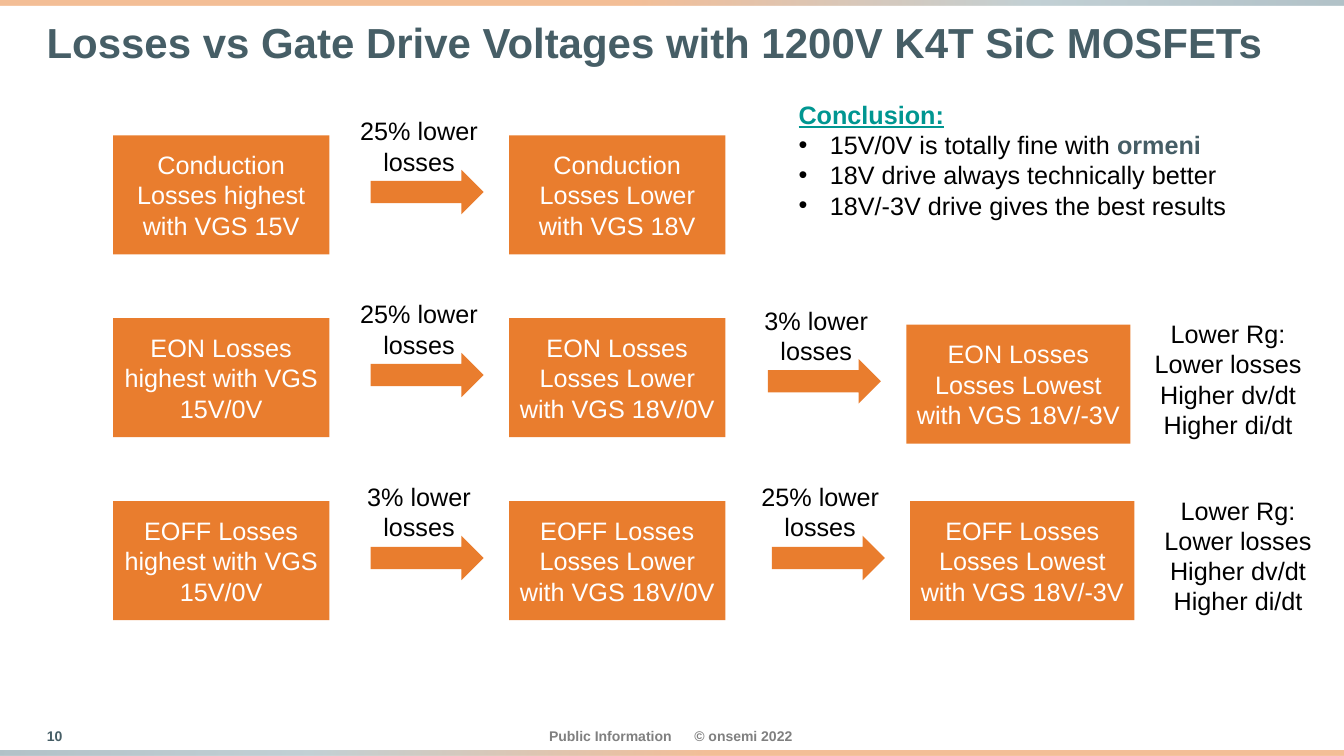
from dataclasses import dataclass

import pptx
import pptx.dml.color
import pptx.enum.shapes
import pptx.enum.text
import pptx.oxml.ns
import pptx.util
from lxml import etree
from pptx.util import Cm

SHAPE = pptx.enum.shapes.MSO_SHAPE
ALIGN = pptx.enum.text.PP_ALIGN
ANCHOR = pptx.enum.text.MSO_ANCHOR
qn = pptx.oxml.ns.qn

ORANGE, SLATE, TEAL = "E97D2E", "465E66", "009691"
WHITE, BLACK, GREY = "FFFFFF", "000000", "808080"
BOX_H = 3.0
ROW_TOP, ROW_STEP = 3.41, 4.61
COL_1, COL_2 = 2.85, 12.83


@dataclass
class Step:
    text: str
    x: float
    y: float
    w: float = 5.45
    gain: str = ""  # label of the arrow leading to this box


@dataclass
class Note:
    center: float
    y: float


def rgb(value: str) -> pptx.dml.color.RGBColor:
    return pptx.dml.color.RGBColor.from_string(value)


def add_run(p, text: str, *, size: float = 18, color: str = BLACK,
            bold: bool = False, underline: bool = False) -> None:
    r = p.add_run()
    r.text = text
    r.font.name = "Arial"
    r.font.size = pptx.util.Pt(size)
    r.font.bold = bold
    r.font.underline = underline
    r.font.color.rgb = rgb(color)


def write(tf, lines: list[str], *, align=ALIGN.CENTER, anchor=ANCHOR.TOP,
          wrap: bool = True, inset: float | None = None,
          tab: float | None = None, **font) -> None:
    tf.word_wrap = wrap
    tf.vertical_anchor = anchor
    if inset is not None:
        tf.margin_left = tf.margin_right = tf.margin_top = tf.margin_bottom = Cm(inset)
    for i, line in enumerate(lines):
        p = tf.add_paragraph() if i else tf.paragraphs[0]
        p.alignment = align
        if tab is not None:
            tabs = etree.SubElement(p._p.get_or_add_pPr(), qn("a:tabLst"))
            etree.SubElement(tabs, qn("a:tab"), pos=str(Cm(tab)), algn="l")
        add_run(p, line, **font)


def place(sp, x: float, y: float, w: float, h: float) -> None:
    sp.left, sp.top, sp.width, sp.height = Cm(x), Cm(y), Cm(w), Cm(h)


def add_text(s, x: float, y: float, w: float, h: float, lines: list[str], **style) -> None:
    write(s.shapes.add_textbox(Cm(x), Cm(y), Cm(w), Cm(h)).text_frame, lines, **style)


def add_shape(s, kind, x: float, y: float, w: float, h: float):
    sp = s.shapes.add_shape(kind, Cm(x), Cm(y), Cm(w), Cm(h))
    sp.shadow.inherit = False
    sp.fill.solid()
    sp.fill.fore_color.rgb = rgb(ORANGE)
    sp.line.fill.background()
    return sp


def add_bar(s, y: float, angle: int) -> None:
    sp = add_shape(s, SHAPE.RECTANGLE, 0, y, 33.87, 0.14)
    sp.fill.gradient()
    sp.fill.gradient_angle = angle
    stops = sp.element.spPr.find(qn("a:gradFill")).find(qn("a:gsLst"))
    for stop in list(stops):
        stops.remove(stop)
    for pos, color in ((47, ORANGE), (77, "87A3AC"), (100, "648692")):
        stop = etree.SubElement(stops, qn("a:gs"), pos=str(pos * 1000))
        clr = etree.SubElement(stop, qn("a:srgbClr"), val=color)
        etree.SubElement(clr, qn("a:alpha"), val="50000")


def add_step(s, step: Step) -> None:
    sp = add_shape(s, SHAPE.RECTANGLE, step.x, step.y, step.w, BOX_H)
    write(sp.text_frame, [step.text], anchor=ANCHOR.MIDDLE, color=WHITE)
    if step.gain:
        add_shape(s, SHAPE.RIGHT_ARROW, step.x - 3.49, step.y + 0.87, 2.85, 1.12)
        add_text(s, step.x - 4.02, step.y - 0.62, 3.5, 1.8,
                 [step.gain, "losses"], wrap=False)


def add_conclusion(sp) -> None:
    place(sp, 19.87, 2.37, 11.4, 4.11)
    tf = sp.text_frame
    tf.auto_size = pptx.enum.text.MSO_AUTO_SIZE.NONE
    tf.word_wrap = False
    items = [
        [("Conclusion:", dict(color=TEAL, bold=True, underline=True))],
        [("15V/0V is totally fine with ", {}), ("ormeni", dict(color=SLATE, bold=True))],
        [("18V drive always technically better", {})],
        [("18V/-3V drive gives the best results", {})],
    ]
    for i, runs in enumerate(items):
        p = tf.add_paragraph() if i else tf.paragraphs[0]
        pPr = p._p.get_or_add_pPr()
        indent = Cm(0.79) if i else 0
        pPr.set("marL", str(indent))
        pPr.set("indent", str(-indent))
        if i:
            etree.SubElement(pPr, qn("a:buFont"), typeface="Arial")
            etree.SubElement(pPr, qn("a:buChar"), char="•")
        else:
            etree.SubElement(pPr, qn("a:buNone"))
        p.space_before = pptx.util.Pt(0)
        for text, font in runs:
            add_run(p, text, **font)


def main() -> None:
    prs = pptx.Presentation()
    prs.slide_width, prs.slide_height = Cm(33.87), Cm(19.05)
    s = prs.slides.add_slide(prs.slide_layouts[1])

    # Frame bars and footer
    add_bar(s, 0, 0)
    add_bar(s, 18.91, 180)
    footer = dict(anchor=ANCHOR.MIDDLE, inset=0, size=10, bold=True)
    add_text(s, 13.84, 18.34, 6.3, 0.43, ["Public Information\t© onsemi 2022"],
             align=ALIGN.LEFT, tab=3.66, color=GREY, **footer)
    add_text(s, 0.38, 18.34, 1.19, 0.43, ["10"], align=ALIGN.RIGHT, color=SLATE, **footer)

    # Title and conclusion
    title = s.shapes.title
    place(title, 0.92, 0.41, 32.03, 1.42)
    write(title.text_frame, ["Losses vs Gate Drive Voltages with 1200V K4T SiC MOSFETs"],
          align=ALIGN.LEFT, anchor=ANCHOR.MIDDLE, size=30, color=SLATE, bold=True)
    title.text_frame.paragraphs[0].line_spacing = 0.92
    add_conclusion(s.placeholders[1])

    # Loss chains, one row per loss type
    row_1, row_2, row_3 = (ROW_TOP + i * ROW_STEP for i in range(3))
    steps = [
        Step("Conduction Losses highest with VGS 15V", COL_1, row_1),
        Step("Conduction Losses Lower with VGS 18V", COL_2, row_1, gain="25% lower"),
        Step("EON Losses highest with VGS 15V/0V", COL_1, row_2),
        Step("EON Losses Losses Lower with VGS 18V/0V", COL_2, row_2, gain="25% lower"),
        Step("EON Losses Losses Lowest with VGS 18V/-3V", 22.84, row_2 + 0.16, 5.65, "3% lower"),
        Step("EOFF Losses highest with VGS 15V/0V", COL_1, row_3),
        Step("EOFF Losses Losses Lower with VGS 18V/0V", COL_2, row_3, gain="3% lower"),
        Step("EOFF Losses Losses Lowest with VGS 18V/-3V", 22.94, row_3, 5.65, "25% lower"),
    ]
    for step in steps:
        add_step(s, step)

    # Gate resistor notes
    for note in (Note(30.95, 7.9), Note(31.2, 12.35)):
        add_text(s, note.center - 2.12, note.y, 4.24, 3.33,
                 ["Lower Rg:", "Lower losses", "Higher dv/dt", "Higher di/dt"], wrap=False)

    prs.save("out.pptx")


if __name__ == "__main__":
    main()
